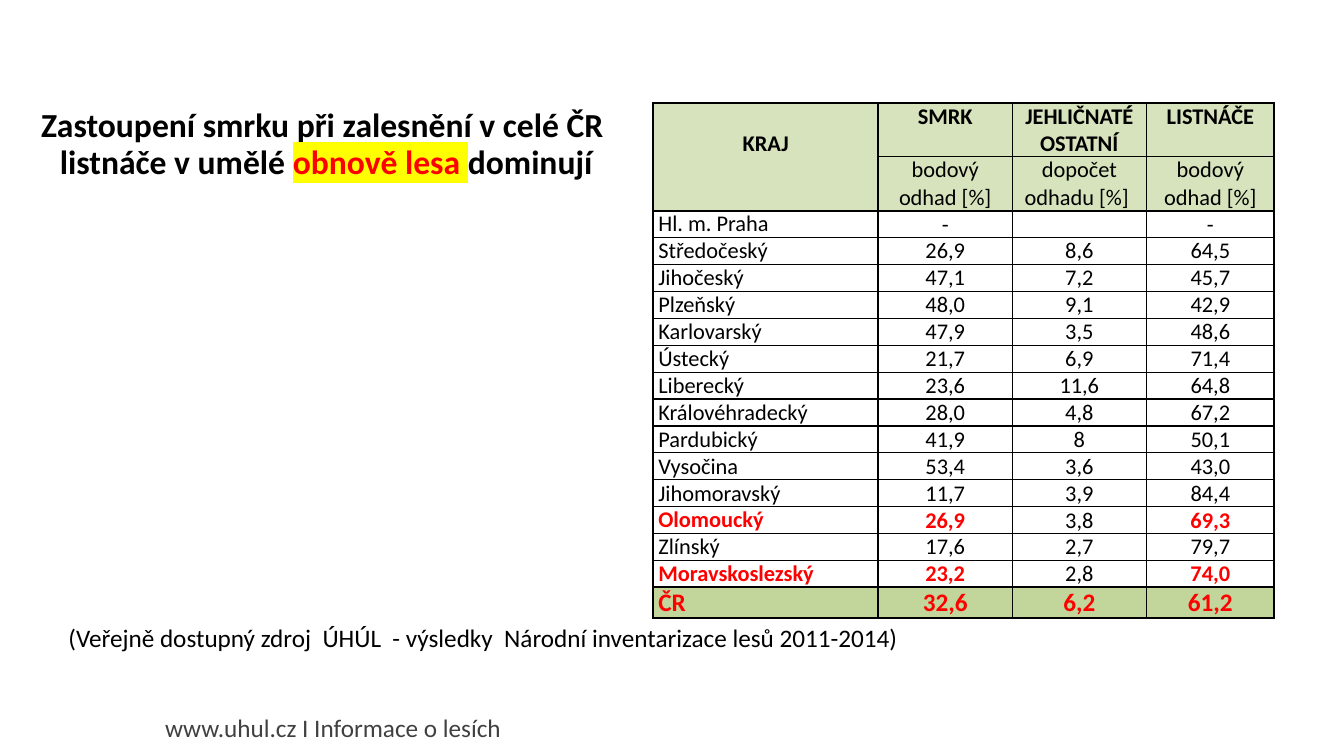
import pptx
import pptx.util
import pptx.dml.color
import pptx.enum.text
import pptx.oxml.ns
import lxml.etree

Inches = pptx.util.Inches
Pt = pptx.util.Pt
qn = pptx.oxml.ns.qn
ALIGN = pptx.enum.text.PP_ALIGN
ANCHOR = pptx.enum.text.MSO_ANCHOR

HUES = {
    "black": "000000",
    "grey": "404040",
    "red": "FF0000",
    "mark": "FFFF00",
    "head": "D6E3BC",
    "total": "C2D69B",
}

HEADS = [
    ["KRAJ", "SMRK", "JEHLIČNATÉ OSTATNÍ", "LISTNÁČE"],
    ["", "bodový odhad [%]", "dopočet odhadu [%] ", "bodový odhad [%]"],
]
SHARES = [
    ["Hl. m. Praha", "-", "", "-"],
    ["Středočeský", "26,9", "8,6", "64,5"],
    ["Jihočeský", "47,1", "7,2", "45,7"],
    ["Plzeňský", "48,0", "9,1", "42,9"],
    ["Karlovarský", "47,9", "3,5", "48,6"],
    ["Ústecký", "21,7", "6,9", "71,4"],
    ["Liberecký", "23,6", "11,6", "64,8"],
    ["Královéhradecký", "28,0", "4,8", "67,2"],
    ["Pardubický", "41,9", "8", "50,1"],
    ["Vysočina", "53,4", "3,6", "43,0"],
    ["Jihomoravský", "11,7", "3,9", "84,4"],
    ["Olomoucký", "26,9", "3,8", "69,3"],
    ["Zlínský", "17,6", "2,7", "79,7"],
    ["Moravskoslezský", "23,2", "2,8", "74,0"],
    ["ČR", "32,6", "6,2", "61,2"],
]
KEYS = ("Olomoucký", "Moravskoslezský")
ROWS = HEADS + SHARES
LAST = len(ROWS) - 1
WIDTHS = [2.23, 1.33, 1.33, 1.27]
HEIGHTS = [0.38] * 2 + [0.21] * (len(SHARES) - 1) + [0.23]
# Grid lines that are drawn heavy, counted from the left and from the top
HEAVY_X = (0, 1, len(WIDTHS))
HEAVY_Y = (0, len(HEADS), LAST, len(ROWS))


def rgb(hue):
    return pptx.dml.color.RGBColor.from_string(HUES[hue])


def style(run, size, hue="black", bold=False, mark=None):
    font = run.font
    font.size = Pt(size)
    font.bold = bold
    font.color.rgb = rgb(hue)
    if mark:
        light = lxml.etree.SubElement(font._element, qn("a:highlight"))
        lxml.etree.SubElement(light, qn("a:srgbClr"), val=HUES[mark])
    font.name = "Calibri"


def add_title(slide):
    title = slide.shapes.title
    title.left, title.top = Inches(0.27), Inches(1.02)
    title.width, title.height = Inches(5.93), Inches(0.84)
    frame = title.text_frame
    frame.word_wrap = True
    frame.auto_size = pptx.enum.text.MSO_AUTO_SIZE.NONE
    frame.vertical_anchor = ANCHOR.MIDDLE
    para = frame.paragraphs[0]
    para.text = "Zastoupení smrku při zalesnění v celé ČR \vlistnáče v umělé "
    para.alignment = ALIGN.CENTER
    para.line_spacing = 0.9
    for run in para.runs:
        style(run, 24, bold=True)
    for text, hue, mark in (("obnově lesa ", "red", "mark"), ("dominují", "black", None)):
        run = para.add_run()
        run.text = text
        style(run, 24, hue, True, mark)


def add_note(slide, text, box, hue, wrap=True):
    shape = slide.shapes.add_textbox(*map(Inches, box))
    shape.text_frame.word_wrap = wrap
    para = shape.text_frame.paragraphs[0]
    para.text = text
    style(para.runs[0], 18, hue)
    return para


def add_edge(cell, side, heavy):
    line = lxml.etree.SubElement(
        cell._tc.get_or_add_tcPr(), qn("a:ln" + side), w=str(Pt(1.5 if heavy else 1)))
    fill = lxml.etree.SubElement(line, qn("a:solidFill"))
    lxml.etree.SubElement(fill, qn("a:srgbClr"), val=HUES["black"])


def look(row, col):
    """Return the size, colour and weight of the text in a cell."""
    if row < len(HEADS):
        return 16, "black", row == 0
    if row == LAST:
        return 18, "red", True
    key = ROWS[row][0] in KEYS and col != 2
    return 16, "red" if key else "black", key


def fill_cell(cell, row, col):
    cell.margin_left = cell.margin_right = Inches(0.05)
    cell.margin_top = cell.margin_bottom = 0
    head = row < len(HEADS)
    if not head:
        cell.vertical_anchor = ANCHOR.MIDDLE if col else ANCHOR.BOTTOM

    for side, heavy in (
        ("L", col in HEAVY_X),
        ("R", col + 1 in HEAVY_X),
        ("T", row in HEAVY_Y),
        ("B", row + 1 in HEAVY_Y or (head and col == 0)),
    ):
        add_edge(cell, side, heavy)
    if head or row == LAST:
        cell.fill.solid()
        cell.fill.fore_color.rgb = rgb("head" if head else "total")
    else:
        cell.fill.background()

    para = cell.text_frame.paragraphs[0]
    para.alignment = ALIGN.CENTER if head or col else ALIGN.LEFT
    size, hue, bold = look(row, col)
    if ROWS[row][col]:
        para.text = ROWS[row][col]
        style(para.runs[0], size, hue, bold)
    else:
        lxml.etree.SubElement(para._p, qn("a:endParaRPr"), sz=str(size * 100))


def add_shares(slide):
    frame = slide.shapes.add_table(
        len(ROWS), len(WIDTHS), Inches(6.48), Inches(1.02),
        Inches(sum(WIDTHS)), Inches(sum(HEIGHTS)))
    table = frame.table
    table.first_row = table.horz_banding = False
    for col, width in enumerate(WIDTHS):
        table.columns[col].width = Inches(width)
    for row, height in enumerate(HEIGHTS):
        table.rows[row].height = Inches(height)
        for col in range(len(WIDTHS)):
            fill_cell(table.cell(row, col), row, col)
    region = table.cell(0, 0)
    region.merge(table.cell(1, 0))
    region.margin_top = Inches(0.27)


def main():
    deck = pptx.Presentation()
    deck.slide_width, deck.slide_height = Inches(13.33), Inches(7.5)
    slide = deck.slides.add_slide(deck.slide_layouts[5])
    foot = add_note(slide, "www.uhul.cz I Informace o lesích", (1.54, 7.05, 6.23, 0.4), "grey")
    foot.line_spacing = 0.9
    add_title(slide)
    add_shares(slide)
    add_note(
        slide,
        "(Veřejně dostupný zdroj  ÚHÚL  - výsledky  Národní inventarizace lesů 2011-2014)",
        (0.58, 6.12, 8.98, 0.4), "black")
    deck.save("out.pptx")


if __name__ == "__main__":
    main()
